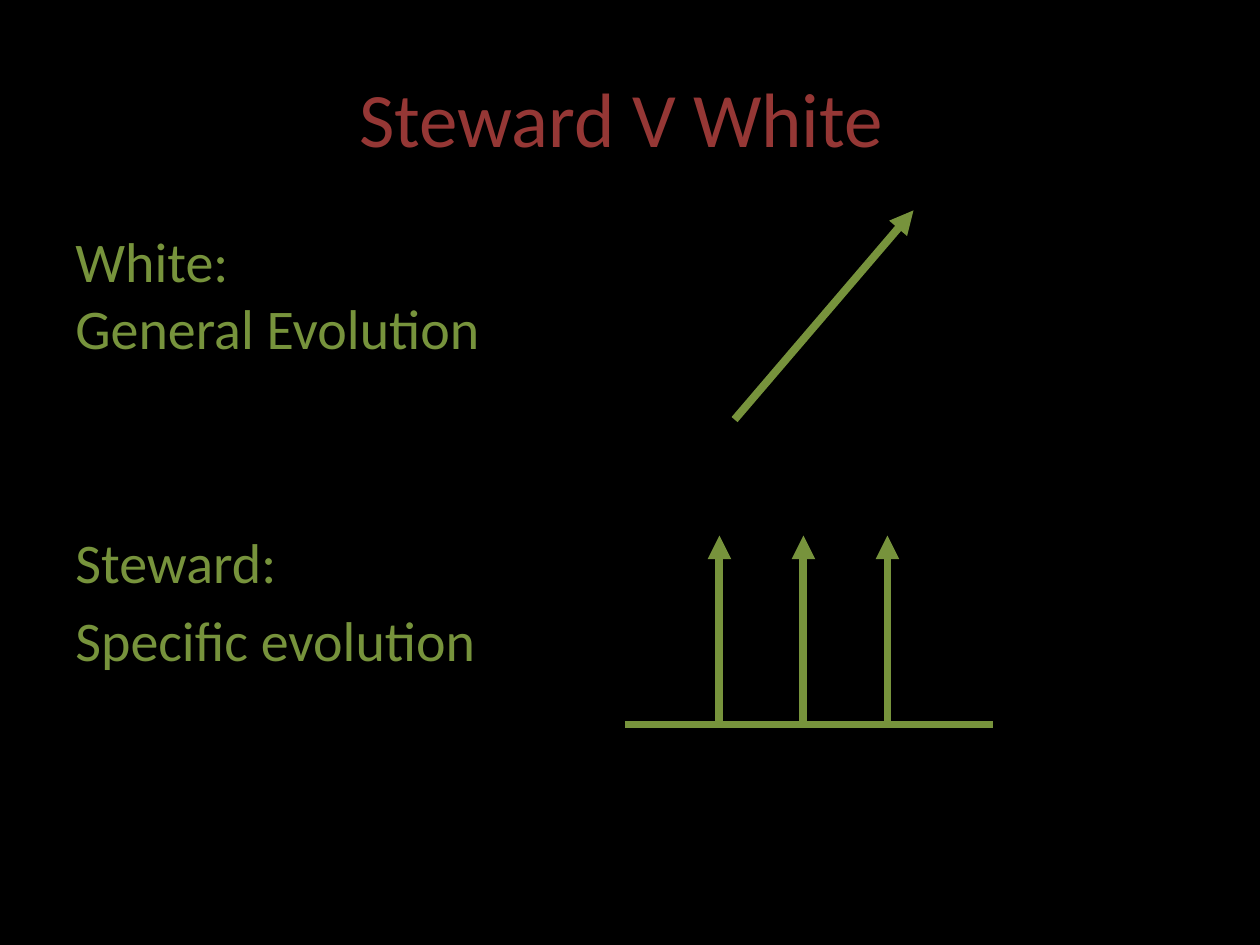
from pptx import Presentation, util as u
from pptx.dml.color import RGBColor
from pptx.enum import shapes, text
from pptx.oxml.ns import qn
from lxml import etree

COLORS = {"back": "000000", "title": "953735", "green": "77933C"}


def add_text(p, words, size=32, color="green", align=text.PP_ALIGN.LEFT, before=0):
    """Fill a paragraph; a vertical tab in the words is a line break."""
    p.text = words
    p.alignment = align
    p.space_before = u.Pt(before)
    for r in p.runs:
        r.font.name = "Calibri"
        r.font.size = u.Pt(size)
        r.font.color.rgb = RGBColor.from_string(COLORS[color])


class SlideBuilder:
    def __init__(self, s, line_color="green", line_width=4.5):
        self.s = s
        self.line_color = line_color
        self.line_width = line_width

    def background(self, color):
        fill = self.s.background.fill
        fill.solid()
        fill.fore_color.rgb = RGBColor.from_string(COLORS[color])

    def text_box(self, x, y, w, h, anchor=text.MSO_ANCHOR.TOP):
        sp = self.s.shapes.add_textbox(*map(u.Inches, (x, y, w, h)))
        tf = sp.text_frame
        tf.word_wrap = True
        tf.vertical_anchor = anchor
        return tf

    def line(self, x1, y1, x2, y2, arrow=False):
        sp = self.s.shapes.add_connector(
            shapes.MSO_CONNECTOR.STRAIGHT, *map(u.Inches, (x1, y1, x2, y2)))
        sp.line.color.rgb = RGBColor.from_string(COLORS[self.line_color])
        sp.line.width = u.Pt(self.line_width)
        if arrow:
            ln = sp.line._get_or_add_ln()
            etree.SubElement(ln, qn("a:tailEnd"), type="triangle")
        etree.SubElement(sp._element.spPr, qn("a:effectLst"))


def main():
    prs = Presentation()
    prs.slide_width, prs.slide_height = u.Inches(10), u.Inches(7.5)
    b = SlideBuilder(prs.slides.add_slide(prs.slide_layouts[6]))
    b.background("back")

    title = b.text_box(0.5, 0.3, 9, 1.25, text.MSO_ANCHOR.MIDDLE)
    add_text(title.paragraphs[0], "Steward V White ", size=44, color="title",
             align=text.PP_ALIGN.CENTER)

    body = b.text_box(0.5, 1.75, 7.02, 4.95)
    add_text(body.paragraphs[0], "White:\vGeneral Evolution", before=6)
    add_text(body.add_paragraph(), "Steward:", before=95)
    add_text(body.add_paragraph(), "Specific evolution", before=6)

    # General evolution: one rising line
    b.line(5.83, 3.33, 7.25, 1.67, arrow=True)

    # Specific evolution: parallel lines from one base
    base, top = 5.75, 4.25
    b.line(4.96, base, 7.88, base)
    for i in range(3):
        x = 5.71 + i * 2 / 3
        b.line(x, base, x, top, arrow=True)

    prs.save("out.pptx")


if __name__ == "__main__":
    main()
